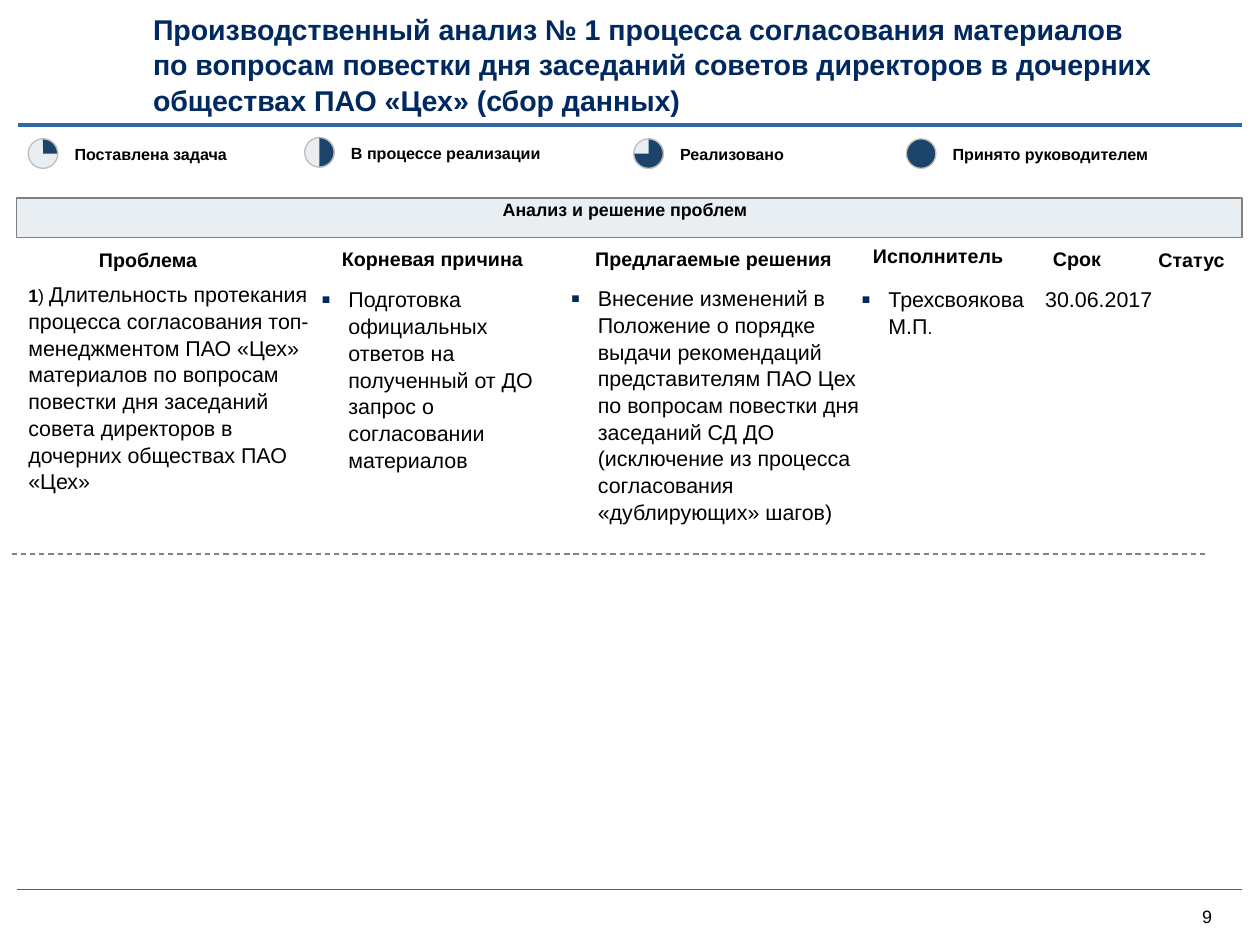
"""Build the production analysis slide with its legend and problem columns."""
import pptx
import pptx.dml.color
import pptx.enum.dml
import pptx.enum.shapes
import pptx.enum.text
import pptx.oxml.ns
import pptx.util
from dataclasses import dataclass
from lxml import etree

Inches, Pt = pptx.util.Inches, pptx.util.Pt
qn = pptx.oxml.ns.qn
Shape = pptx.enum.shapes.MSO_SHAPE
Align = pptx.enum.text.PP_ALIGN
Anchor = pptx.enum.text.MSO_ANCHOR


@dataclass(frozen=True)
class Theme:
    """Colours and type sizes of the slide."""
    font: str = "Arial"
    navy: str = "002960"
    blue: str = "2E69A5"
    dark: str = "1C436A"
    pale: str = "E9EEF3"
    ring: str = "BFBFBF"
    gray: str = "808080"
    black: str = "000000"
    title: int = 16
    body: int = 12
    head: int = 11
    small: int = 10
    key: int = 9
    lead: float = 1.04


THEME = Theme()

TITLE = ("Производственный анализ № 1 процесса согласования материалов "
         "по вопросам повестки дня заседаний советов директоров в дочерних "
         "обществах ПАО «Цех» (сбор данных)")
BAND = "Анализ и решение проблем"
PAGE = "9"

KEYS = [
    ("Поставлена задача", 0.25, 0.22, 1.08),
    ("В процессе реализации", 0.5, 2.37, 1.07),
    ("Реализовано", 0.75, 4.93, 1.08),
    ("Принято руководителем", 1, 7.05, 1.08),
]

HEADS = [
    ("Проблема", 0.77, 1.92, 1.13),
    ("Корневая причина", 2.66, 1.91, 1.48),
    ("Предлагаемые решения", 4.63, 1.91, 1.97),
    ("Исполнитель", 6.79, 1.89, 1.16),
    ("Срок", 8.19, 1.91, 0.56),
    ("Статус", 9.01, 1.92, 0.64),
]

CELLS = [
    ([("1", THEME.small, True), (") ", THEME.small, False),
      ("Длительность протекания процесса согласования топ-менеджментом "
       "ПАО «Цех» материалов по вопросам повестки дня заседаний совета "
       "директоров в дочерних обществах ПАО «Цех»", THEME.body, False)],
     (0.22, 2.18, 2.26, 1.62), False),
    ([("Подготовка официальных ответов на полученный от ДО запрос "
       "о согласовании материалов", THEME.body, False)],
     (2.5, 2.22, 1.8, 1.41), True),
    ([("Внесение изменений в Положение о порядке выдачи рекомендаций "
       "представителям ПАО Цех по вопросам повестки дня заседаний СД ДО "
       "(исключение из процесса согласования «дублирующих» шагов)",
       THEME.body, False)],
     (4.44, 2.21, 2.26, 1.82), True),
    ([("Трехсвоякова М.П", THEME.body, False), (".", THEME.small, False)],
     (6.7, 2.22, 1.44, 0.4), True),
]
DATE = ("30.06.2017", (8.13, 2.22, 0.9, 0.2))

RULES = [
    ((0.13, 6.92, 9.66, 6.92), THEME.blue, 0.75, False),
    ((0.14, 0.97, 9.66, 0.97), THEME.blue, 2.25, False),
    ((0.09, 4.31, 9.39, 4.31), THEME.gray, 0.75, True),
]


def tint(code):
    return pptx.dml.color.RGBColor.from_string(code)


def place(shape, box):
    shape.left, shape.top, shape.width, shape.height = map(Inches, box)


def write(shape, runs, color=THEME.black, align=Align.LEFT,
          anchor=Anchor.TOP, low=0, right=0):
    frame = shape.text_frame
    frame.auto_size = pptx.enum.text.MSO_AUTO_SIZE.NONE
    frame.word_wrap = True
    frame.vertical_anchor = anchor
    frame.margin_left = frame.margin_top = 0
    frame.margin_right, frame.margin_bottom = Inches(right), Inches(low)
    para = frame.paragraphs[0]
    para.alignment = align
    para.line_spacing = THEME.lead
    para.space_before = Pt(0)
    for text, size, bold in runs:
        run = para.add_run()
        run.text = text
        run.font.name = THEME.font
        run.font.size = Pt(size)
        run.font.bold = bold
        run.font.color.rgb = tint(color)
    return para


def label(slide, box, text, size, bold=True, **look):
    shape = slide.shapes.add_textbox(*map(Inches, box))
    write(shape, [(text, size, bold)], **look)


def mark(para, dotted):
    props = para._p.get_or_add_pPr()
    step = Inches(0.21) if dotted else 0
    props.set("marL", str(step))
    props.set("indent", str(-step))
    if not dotted:
        etree.SubElement(props, qn("a:buNone"))
        return
    color = etree.SubElement(props, qn("a:buClr"))
    etree.SubElement(color, qn("a:srgbClr"), val=THEME.navy)
    etree.SubElement(props, qn("a:buSzPct"), val="125000")
    etree.SubElement(props, qn("a:buFont"), typeface=THEME.font)
    etree.SubElement(props, qn("a:buChar"), char="▪")


def draw(slide, kind, box, fill, edge):
    shape = slide.shapes.add_shape(kind, *map(Inches, box))
    shape.shadow.inherit = False
    shape.fill.solid()
    shape.fill.fore_color.rgb = tint(fill)
    shape.line.color.rgb = tint(edge)
    shape.line.width = Pt(0.75)
    return shape


def rule(slide, ends, color, width, dashed):
    line = slide.shapes.add_connector(
        pptx.enum.shapes.MSO_CONNECTOR.STRAIGHT, *map(Inches, ends))
    line.line.color.rgb = tint(color)
    line.line.width = Pt(width)
    if dashed:
        line.line.dash_style = pptx.enum.dml.MSO_LINE.DASH
    etree.SubElement(line._element.spPr, qn("a:effectLst"))


def key(slide, text, share, left, top):
    box = (left, top, 0.23, 0.23)
    full = share == 1
    draw(slide, Shape.OVAL, box, THEME.dark if full else THEME.pale, THEME.ring)
    if not full:
        wedge = draw(slide, Shape.ARC, box, THEME.dark, THEME.ring)
        wedge.adjustments[0] = 162
        wedge.adjustments[1] = (162 + 216 * share) % 216
    label(slide, (left + 0.36, top + 0.04, 1.6, 0.15), text, THEME.key)


def main():
    deck = pptx.Presentation()
    deck.slide_width, deck.slide_height = Inches(9.8), Inches(7.35)
    slide = deck.slides.add_slide(deck.slide_layouts.get_by_name("Comparison"))
    title, *bodies = slide.placeholders
    place(title, (1.19, 0.09, 7.84, 0.81))
    write(title, [(TITLE, THEME.title, True)], THEME.navy, anchor=Anchor.MIDDLE)
    for ends in RULES:
        rule(slide, *ends)
    for item in KEYS:
        key(slide, *item)
    band = draw(slide, Shape.RECTANGLE, (0.13, 1.54, 9.53, 0.31),
                THEME.pale, THEME.gray)
    write(band, [(BAND, THEME.small, True)], align=Align.CENTER, right=0.07)
    for text, left, top, width in HEADS:
        label(slide, (left, top, width, 0.21), text, THEME.head,
              anchor=Anchor.BOTTOM, low=0.02)
    for body, (runs, box, dotted) in zip(bodies, CELLS):
        place(body, box)
        mark(write(body, runs), dotted)
    label(slide, DATE[1], DATE[0], THEME.body, False)
    label(slide, (9.35, 7.04, 0.23, 0.17), PAGE, THEME.small, False,
          anchor=Anchor.MIDDLE)
    deck.save("out.pptx")


if __name__ == "__main__":
    main()
